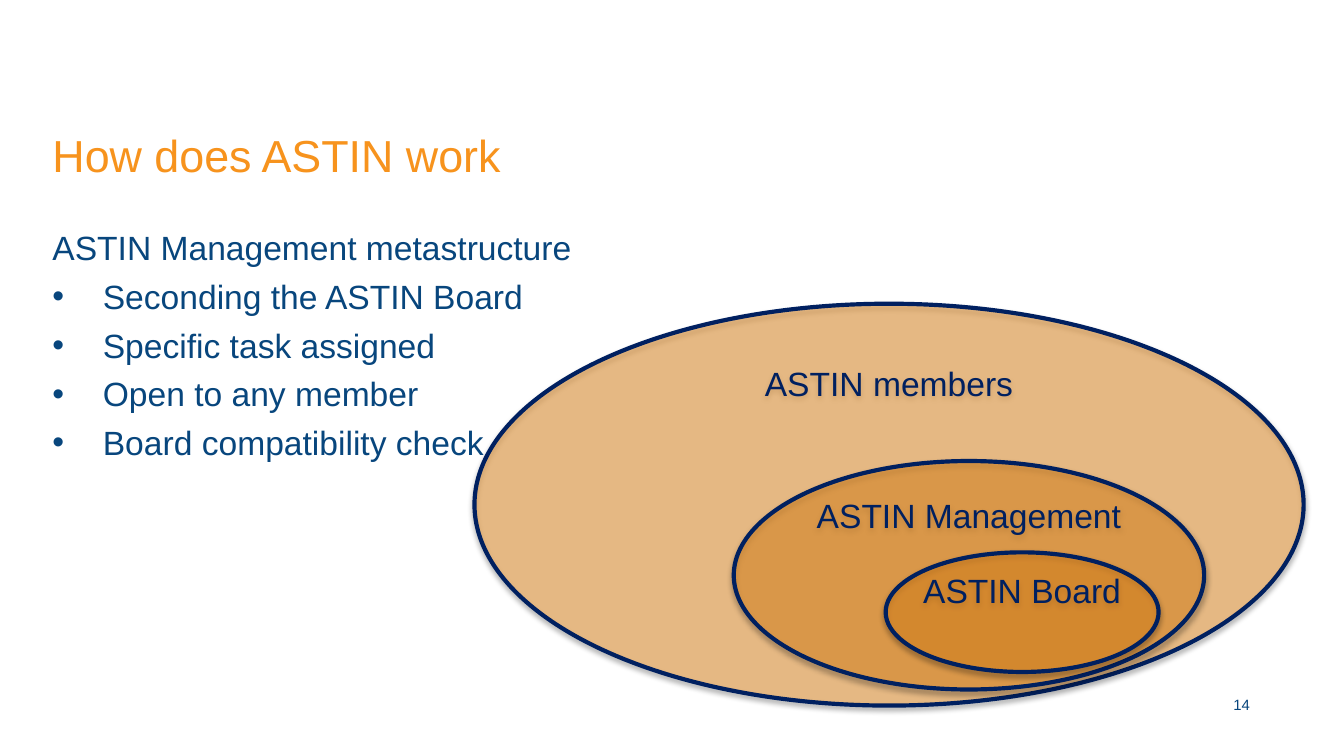
"""Build the slide on how ASTIN works, with its nested membership ellipses."""
import pptx
import pptx.dml.color
import pptx.enum.shapes
import pptx.enum.text
import pptx.oxml.ns
import pptx.util
from lxml import etree

Pt = pptx.util.Pt
qn = pptx.oxml.ns.qn
ALIGN = pptx.enum.text.PP_ALIGN
ANCHOR = pptx.enum.text.MSO_ANCHOR

COLORS = {"orange": "F7931D", "blue": "08467D", "navy": "002060", "shadow": "000000"}
FONT = "Arial"
INDENT = 27

POINTS = [
    "Seconding the ASTIN Board",
    "Specific task assigned",
    "Open to any member",
    "Board compatibility check",
]
CIRCLES = [
    ("ASTIN members", (254.2, 162.7, 444.2, 215.3)),
    ("ASTIN Management", (393.1, 247, 252, 122.4)),
    ("ASTIN Board", (474.5, 295.9, 146.2, 64.1)),
]


def rgb(name):
    return pptx.dml.color.RGBColor.from_string(COLORS[name])


def place(part, box):
    part.left, part.top, part.width, part.height = map(Pt, box)


def add_run(paragraph, text, size, color):
    run = paragraph.add_run()
    run.text = text
    run.font.name = FONT
    run.font.size = Pt(size)
    run.font.color.rgb = rgb(color)


def set_frame(frame, anchor, wrap=True):
    frame.auto_size = pptx.enum.text.MSO_AUTO_SIZE.NONE
    frame.vertical_anchor = anchor
    frame.word_wrap = wrap


def fill_title(title, text):
    place(title, (20.9, 64.8, 676.8, 54))
    set_frame(title.text_frame, ANCHOR.TOP)
    heading = title.text_frame.paragraphs[0]
    heading.alignment = ALIGN.LEFT
    add_run(heading, text, 24, "orange")


def add_list_line(paragraph, text, bullet=None):
    properties = paragraph._p.get_or_add_pPr()
    properties.set("marL", str(Pt(INDENT)))
    properties.set("indent", str(-Pt(INDENT)))
    if bullet:
        etree.SubElement(properties, qn("a:buChar"), char=bullet)
    else:
        etree.SubElement(properties, qn("a:buNone"))
    paragraph.space_before = Pt(4.5 if bullet else 0)
    add_run(paragraph, text, 18, "blue")


def fill_body(body, lead, points):
    place(body, (20.9, 118.1, 677.5, 257))
    frame = body.text_frame
    set_frame(frame, ANCHOR.TOP)
    add_list_line(frame.paragraphs[0], lead)
    for point in points:
        add_list_line(frame.add_paragraph(), point, "•")


def add_page_number(slide, number):
    page = slide.shapes.add_textbox(*map(Pt, (645.1, 366.5, 31.7, 21.6)))
    set_frame(page.text_frame, ANCHOR.MIDDLE)
    paragraph = page.text_frame.paragraphs[0]
    paragraph.alignment = ALIGN.RIGHT
    add_run(paragraph, number, 8, "blue")


def set_alpha(color_element, percent):
    etree.SubElement(color_element, qn("a:alpha"), val=str(percent * 1000))


def add_shadow(shape):
    shape.shadow.inherit = False
    effects = shape._element.spPr.find(qn("a:effectLst"))
    shadow = etree.SubElement(
        effects, qn("a:outerShdw"), blurRad=str(Pt(3.1)), dist=str(Pt(1.8)),
        dir="5400000", rotWithShape="0")
    set_alpha(etree.SubElement(shadow, qn("a:srgbClr"), val=COLORS["shadow"]), 35)


def add_circle(slide, label, box):
    circle = slide.shapes.add_shape(
        pptx.enum.shapes.MSO_SHAPE.OVAL, *map(Pt, box))
    circle.fill.solid()
    circle.fill.fore_color.rgb = rgb("orange")
    set_alpha(circle._element.spPr.find(qn("a:solidFill"))[0], 45)
    circle.line.color.rgb = rgb("navy")
    circle.line.width = Pt(2.25)
    add_shadow(circle)
    frame = circle.text_frame
    set_frame(frame, ANCHOR.TOP, wrap=False)
    frame.margin_left = frame.margin_right = 0
    frame.margin_top = frame.margin_bottom = 0
    frame.paragraphs[0].alignment = ALIGN.CENTER
    add_run(frame.paragraphs[0], label, 18, "navy")


def main():
    deck = pptx.Presentation()
    deck.slide_width, deck.slide_height = Pt(720), Pt(405)
    slide = deck.slides.add_slide(deck.slide_layouts[1])
    fill_title(slide.shapes.title, "How does ASTIN work")
    fill_body(slide.placeholders[1], "ASTIN Management metastructure", POINTS)
    add_page_number(slide, "14")
    for label, box in CIRCLES:
        add_circle(slide, label, box)
    deck.save("out.pptx")


if __name__ == "__main__":
    main()
